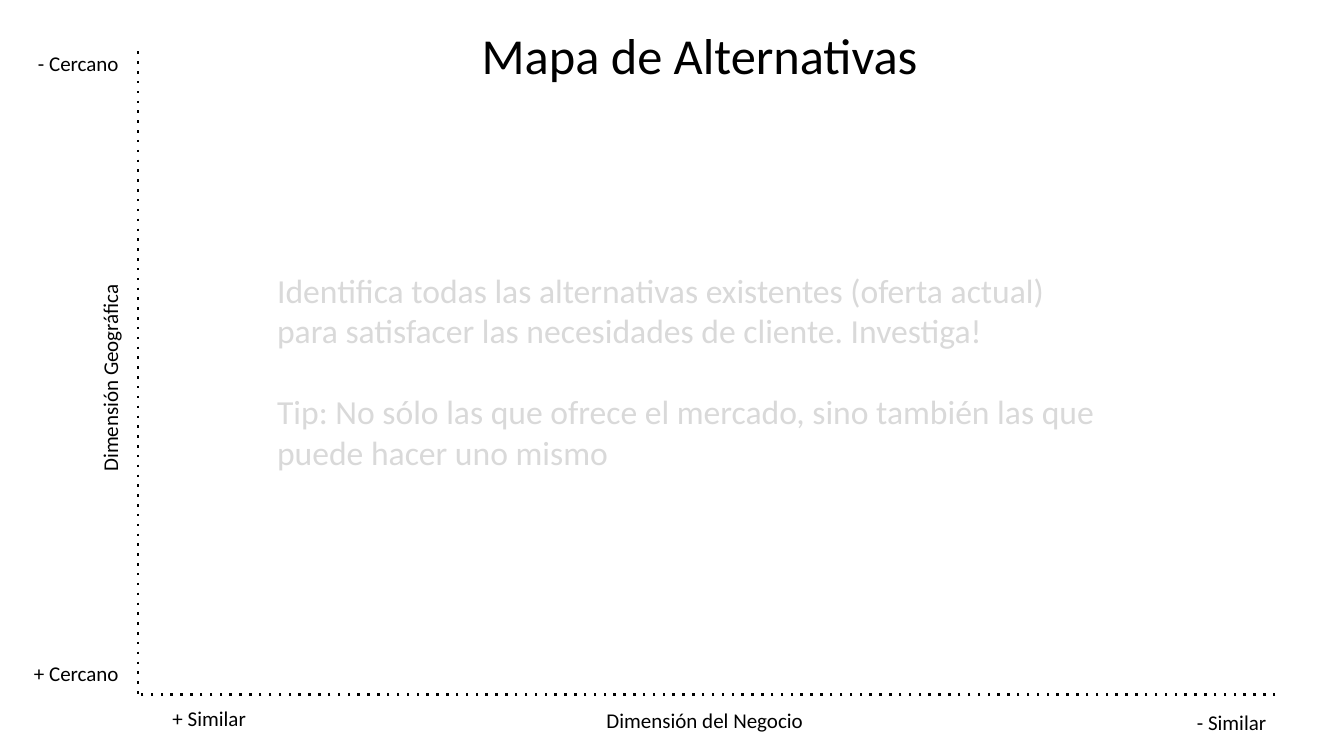
"""Build the slide that maps alternatives by business and geographic dimension."""
from lxml import etree
from pptx import Presentation, util as u
from pptx.dml.color import RGBColor
from pptx.enum import dml, shapes, text
from pptx.oxml import ns


def color(hex_string):
    return RGBColor.from_string(hex_string)


def format_text(text_frame, size, hex_string, alignment, anchor):
    text_frame.word_wrap = True
    text_frame.auto_size = text.MSO_AUTO_SIZE.NONE
    text_frame.vertical_anchor = anchor
    text_frame.margin_left = text_frame.margin_right = u.Inches(0.1)
    text_frame.margin_top = text_frame.margin_bottom = u.Inches(0.05)
    for paragraph in text_frame.paragraphs:
        paragraph.alignment = alignment
        for run in paragraph.runs:
            run.font.name = "Calibri"
            run.font.size = u.Pt(size)
            run.font.color.rgb = color(hex_string)


presentation = Presentation()
presentation.slide_width = u.Inches(13.33)
presentation.slide_height = u.Inches(7.5)
slide = presentation.slides.add_slide(presentation.slide_layouts[5])
center, right = text.PP_ALIGN.CENTER, text.PP_ALIGN.RIGHT
middle = text.MSO_ANCHOR.MIDDLE

title = slide.shapes.title
title.left, title.top = u.Inches(0.91), u.Inches(0.14)
title.width, title.height = u.Inches(12.06), u.Inches(0.79)
title.text_frame.text = "Mapa de Alternativas"
format_text(title.text_frame, 36, "000000", center, middle)

origin_x, origin_y = 1.37, 6.89
for end_x, end_y in [(12.65, origin_y), (origin_x, 0.51)]:
    axis = slide.shapes.add_connector(
        shapes.MSO_CONNECTOR.STRAIGHT,
        u.Inches(end_x), u.Inches(end_y), u.Inches(origin_x), u.Inches(origin_y))
    axis.line.color.rgb = color("000000")
    axis.line.width = u.Pt(1.75)
    axis.line.dash_style = dml.MSO_LINE.ROUND_DOT
    next(axis.element.iter(ns.qn("a:prstDash"))).set("val", "dot")
    etree.SubElement(axis.element.spPr, ns.qn("a:effectLst"))

axis_labels = [
    ("Dimensión Geográfica", -0.54, 3.42, 3.26, 0.66, 270, center),
    ("+ Cercano", 0.07, 6.43, 1.23, 0.5, 0, right),
    ("- Cercano", 0.07, 0.38, 1.23, 0.5, 0, right),
    ("Dimensión del Negocio", 4.82, 6.89, 4.34, 0.5, 0, center),
    ("+ Similar", 1.3, 6.87, 1.55, 0.5, 0, center),
    ("- Similar", 11.44, 6.91, 1.55, 0.5, 0, center),
]
for wording, left, top, width, height, rotation, alignment in axis_labels:
    label = slide.shapes.add_shape(
        shapes.MSO_SHAPE.ROUNDED_RECTANGLE,
        u.Inches(left), u.Inches(top), u.Inches(width), u.Inches(height))
    label.rotation = rotation
    label.shadow.inherit = False
    label.fill.background()
    label.line.fill.background()
    label.text_frame.text = wording
    format_text(label.text_frame, 15, "000000", alignment, middle)

guidance = slide.shapes.add_textbox(
    u.Inches(2.65), u.Inches(2.63), u.Inches(8.39), u.Inches(2.12))
guidance.text_frame.text = (
    "Identifica todas las alternativas existentes (oferta actual) "
    "para satisfacer las necesidades de cliente. Investiga!\n"
    "Tip: No sólo las que ofrece el mercado, sino también las que "
    "puede hacer uno mismo")
format_text(guidance.text_frame, 24, "D9D9D9", text.PP_ALIGN.LEFT, text.MSO_ANCHOR.TOP)
guidance.text_frame.paragraphs[1].space_before = u.Pt(29)

presentation.save("out.pptx")
